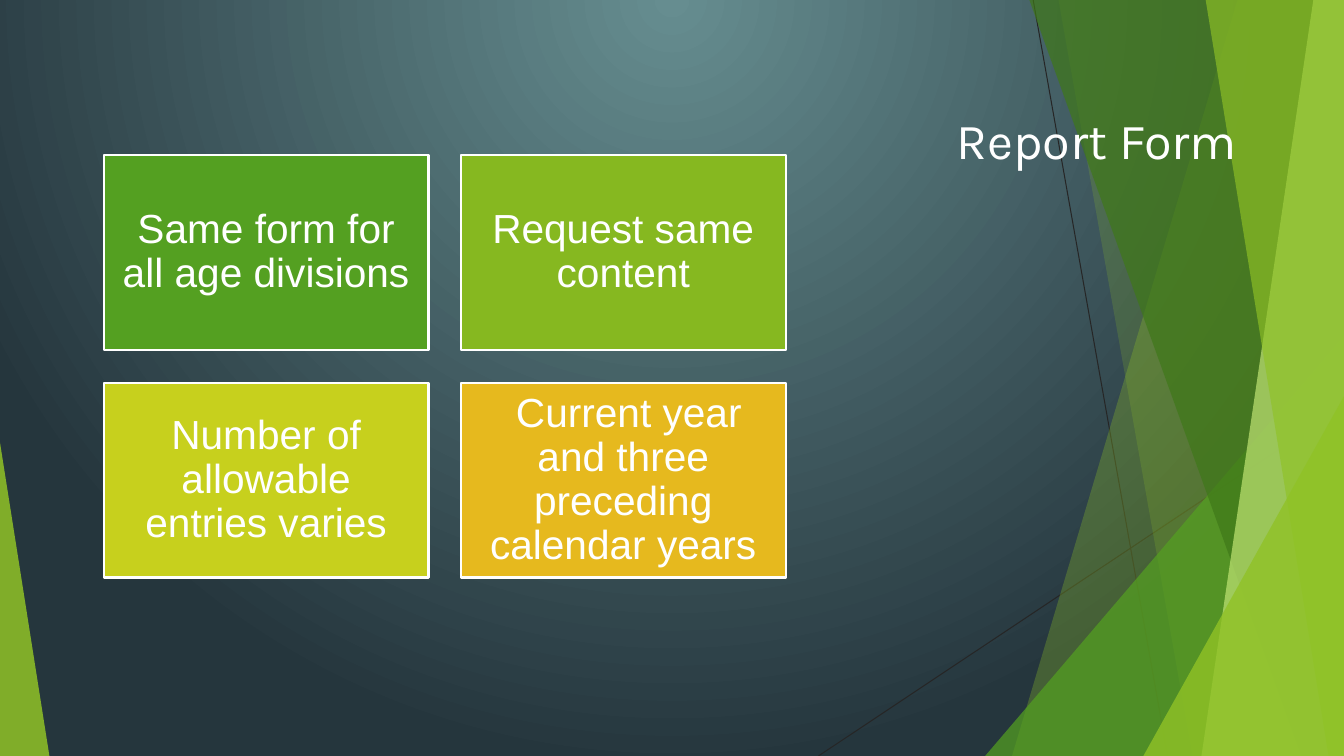
from pptx import Presentation
from pptx import util as u
from pptx.dml import color
from pptx.enum import shapes, text
from pptx.oxml import ns, xmlchemy

Pt = u.Pt
TRI = shapes.MSO_SHAPE.ISOSCELES_TRIANGLE


def rgb(code):
    return color.RGBColor.from_string(code)


def apply(item, props):
    for key, value in props.items():
        setattr(item, key, value)


def sub(parent, tag, **attrs):
    node = xmlchemy.OxmlElement(tag)
    for key, value in attrs.items():
        node.set(key, str(value))
    parent.append(node)
    return node


def paint(shape, code, alpha=100):
    shape.shadow.inherit = False
    shape.fill.solid()
    shape.fill.fore_color.rgb = rgb(code)
    if alpha < 100:
        tint = shape.element.spPr.find(".//" + ns.qn("a:srgbClr"))
        sub(tint, "a:alpha", val=alpha * 1000)


def backdrop(slide):
    fill = slide.background.fill
    fill.gradient()
    for stop, code in zip(fill.gradient_stops, ("668D90", "25363D")):
        stop.color.rgb = rgb(code)
    grad = slide.element.find(".//" + ns.qn("a:gradFill"))
    grad.remove(grad.find(ns.qn("a:lin")))
    round_ = sub(grad, "a:path", path="circle")
    sub(round_, "a:fillToRect", b=100000)


def rays(slide, left, top, wide, high):
    right, base = left + wide, top + high

    def line(x1, y1, x2, y2):
        ray = slide.shapes.add_connector(
            shapes.MSO_CONNECTOR.STRAIGHT,
            Pt(left + x1), Pt(top + y1), Pt(left + x2), Pt(top + y2))
        apply(ray.line, {"width": Pt(0.75)})
        ray.line.color.rgb = rgb("262626")
        sub(ray.element.spPr, "a:effectLst")

    def band(start, end, code, alpha):
        pen = slide.shapes.build_freeform(Pt(left + start), Pt(top - 0.6))
        pen.add_line_segments([(Pt(right), Pt(top - 0.6)),
                               (Pt(right), Pt(base)),
                               (Pt(left + end), Pt(base))])
        shape = pen.convert_to_shape()
        paint(shape, code, alpha)
        shape.line.fill.background()

    def wedge(x, w, h, tip, code, alpha):
        shape = slide.shapes.add_shape(TRI, Pt(x), Pt(base - h), Pt(w), Pt(h))
        shape.adjustments[0] = tip
        paint(shape, code, alpha)
        shape.line.fill.background()

    line(738, 0, 834, high)
    line(wide, 290, 584.6, high)
    band(884.2, 722.9, "90C226", 30)
    band(756, 851.8, "90C226", 20)
    wedge(right - 256.3, 256.3, 300.2, 1, "54A021", 72)
    band(735.1, 929.5, "3F7819", 70)
    band(938.2, 858.2, "C0E474", 70)
    band(861.1, 949, "90C226", 65)
    wedge(right - 143.3, 143.3, 257, 1, "90C226", 80)
    wedge(left, 35.3, 223.9, 0, "90C226", 85)


def write(shape, words, frame, para, font):
    body = shape.text_frame
    body.text = words
    apply(body, frame)
    apply(body.paragraphs[0], para)
    run = body.paragraphs[0].runs[0]
    apply(run.font, font)
    run.font.color.rgb = rgb("FFFFFF")


def head(slide, words, left, top, wide, high):
    title = slide.shapes.title
    apply(title, {"left": Pt(left), "top": Pt(top),
                  "width": Pt(wide), "height": Pt(high)})
    write(title, words,
          {"word_wrap": True, "vertical_anchor": text.MSO_ANCHOR.TOP,
           "auto_size": text.MSO_AUTO_SIZE.NONE},
          {"alignment": text.PP_ALIGN.LEFT},
          {"size": Pt(36), "name": "Karla"})
    title.element.getparent().append(title.element)


def cards(slide, items, left, top, wide, high, gap=23.2):
    w, h = (wide - gap) / 2, (high - gap) / 2
    for i, (words, code) in enumerate(items):
        row, col = divmod(i, 2)
        card = slide.shapes.add_shape(
            shapes.MSO_SHAPE.RECTANGLE, Pt(left + col * (w + gap)),
            Pt(top + row * (h + gap)), Pt(w), Pt(h))
        paint(card, code)
        card.line.width = Pt(1.5)
        card.line.color.rgb = rgb("FFFFFF")
        frame = {"word_wrap": True, "vertical_anchor": text.MSO_ANCHOR.MIDDLE}
        for side in ("left", "right", "top", "bottom"):
            frame["margin_" + side] = Pt(8.7)
        write(card, words, frame,
              {"alignment": text.PP_ALIGN.CENTER, "line_spacing": 0.9},
              {"size": Pt(29), "name": "Arial"})


def main():
    deck = Presentation()
    apply(deck, {"slide_width": Pt(960), "slide_height": Pt(540)})
    slide = deck.slides.add_slide(deck.slide_layouts.get_by_name("Title Only"))
    backdrop(slide)
    rays(slide, 0, 0, 960, 540)
    head(slide, "Report Form", 676, 74.2, 239.8, 255.6)
    cards(slide, [
        ("Same form for all age divisions", "54A021"),
        ("Request same content", "86B820"),
        ("Number of allowable entries varies", "C7D01D"),
        (" Current year and three preceding calendar years", "E6B91E"),
    ], 74.2, 110.9, 487, 301.7)
    deck.save("out.pptx")


if __name__ == "__main__":
    main()
